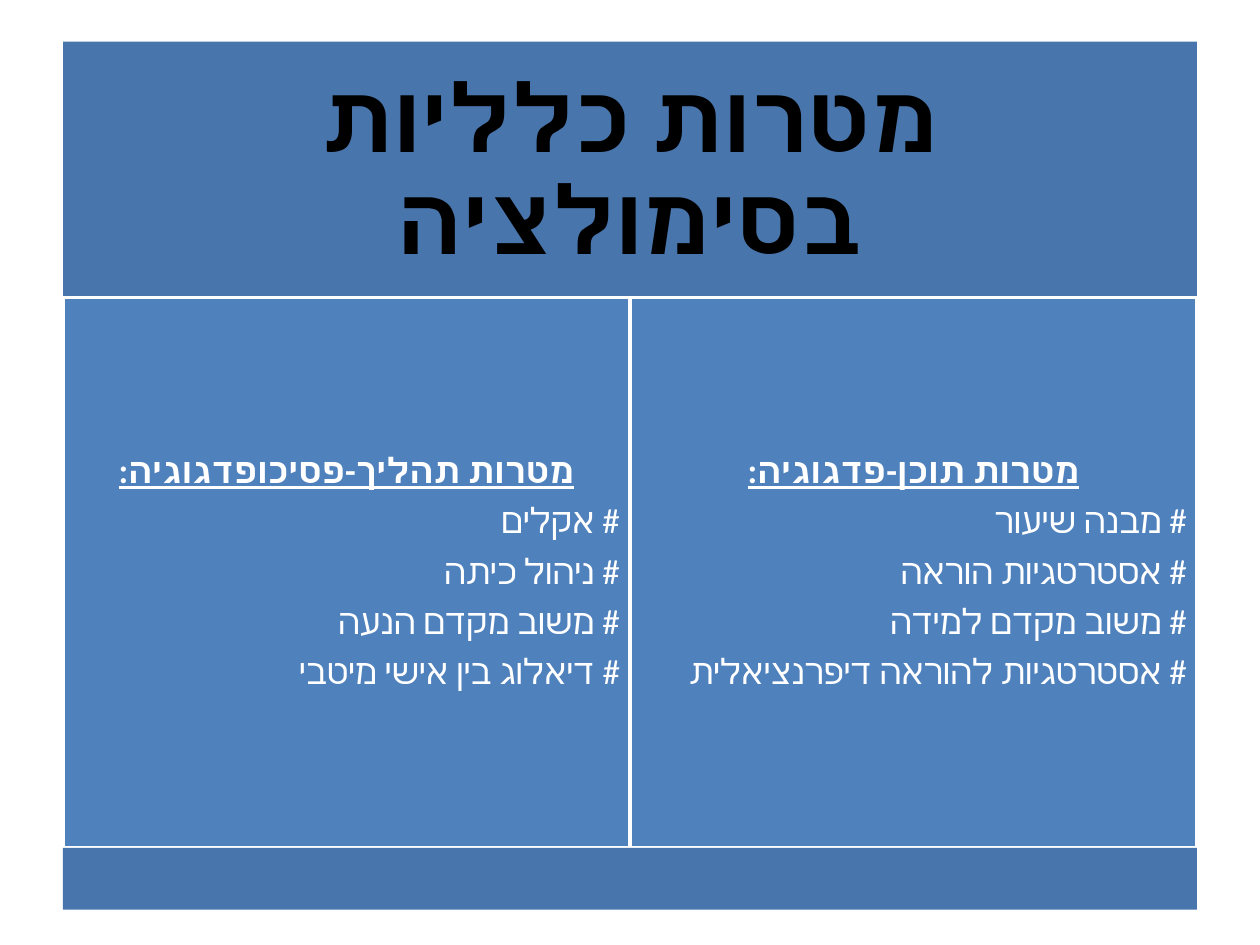
from dataclasses import dataclass

from lxml import etree
from pptx import Presentation
from pptx.dml.color import RGBColor
from pptx.enum.shapes import MSO_SHAPE
from pptx.enum.text import MSO_ANCHOR, MSO_AUTO_SIZE, PP_ALIGN
from pptx.oxml.ns import qn
from pptx.util import Inches, Pt

CENTER, RIGHT = PP_ALIGN.CENTER, PP_ALIGN.RIGHT
MIDDLE = MSO_ANCHOR.MIDDLE
NO_AUTOFIT = MSO_AUTO_SIZE.NONE
RECTANGLE = MSO_SHAPE.RECTANGLE


@dataclass(frozen=True)
class Theme:
    font: str = "Calibri"
    title_size: int = 54
    body_size: int = 20
    band: RGBColor = RGBColor(0x48, 0x75, 0xAC)
    panel: RGBColor = RGBColor(0x4F, 0x81, 0xBD)
    dark: RGBColor = RGBColor(0, 0, 0)
    light: RGBColor = RGBColor(255, 255, 255)


THEME = Theme()
LEFT, WIDTH = 0.5, 9
PANEL_TOP, PANEL_HEIGHT = 2.36, 4.37
PANEL_WIDTH = WIDTH / 2

# Panels from left to right: heading, goals
PANELS = [
    ("מטרות תהליך-פסיכופדגוגיה:",
     ["אקלים", "ניהול כיתה", "משוב מקדם הנעה", "דיאלוג בין אישי מיטבי"]),
    ("מטרות תוכן-פדגוגיה:",
     ["מבנה שיעור", "אסטרטגיות הוראה", "משוב מקדם למידה",
      "אסטרטגיות להוראה דיפרנציאלית"]),
]


def place(shape, left, top, width, height, fill, inset=0.08):
    shape.left, shape.top = Inches(left), Inches(top)
    shape.width, shape.height = Inches(width), Inches(height)
    shape.fill.solid()
    shape.fill.fore_color.rgb = fill
    frame = shape.text_frame
    frame.word_wrap = True
    frame.auto_size = NO_AUTOFIT
    frame.vertical_anchor = MIDDLE
    frame.margin_left = frame.margin_right = Inches(inset)
    frame.margin_top = frame.margin_bottom = Inches(inset)


def write(paragraph, text, size=THEME.body_size, color=THEME.light,
          bold=False, underline=False, align=RIGHT):
    """Fill a right-to-left paragraph that has no bullet."""
    paragraph.alignment = align
    paragraph.line_spacing = 0.9
    paragraph.space_before = Pt(0)
    paragraph.space_after = Pt(0.35 * size)
    properties = paragraph._p.get_or_add_pPr()
    for name, value in (("marL", "0"), ("indent", "0"), ("rtl", "1")):
        properties.set(name, value)
    etree.SubElement(properties, qn("a:buNone"))
    run = paragraph.add_run()
    run.text = text
    font = run.font
    font.name, font.size = THEME.font, Pt(size)
    font.bold, font.underline = bold, underline
    font.color.rgb = color
    # Hebrew takes its typeface from the complex-script font
    etree.SubElement(run._r.get_or_add_rPr(), qn("a:cs"), typeface=THEME.font)


presentation = Presentation()
presentation.slide_width, presentation.slide_height = Inches(10), Inches(7.5)
two_content_layout = presentation.slide_layouts[3]
slide = presentation.slides.add_slide(two_content_layout)

title = slide.shapes.title
place(title, LEFT, 0.33, WIDTH, 2.08, THEME.band, inset=0.23)
write(title.text_frame.paragraphs[0], "מטרות כלליות בסימולציה",
      size=THEME.title_size, color=THEME.dark, bold=True, align=CENTER)

for index, (heading, goals) in enumerate(PANELS):
    panel = slide.placeholders[index + 1]
    place(panel, LEFT + index * PANEL_WIDTH, PANEL_TOP,
          PANEL_WIDTH, PANEL_HEIGHT, THEME.panel)
    panel.line.color.rgb = THEME.light
    panel.line.width = Pt(2)
    frame = panel.text_frame
    write(frame.paragraphs[0], heading, bold=True, underline=True, align=CENTER)
    for goal in goals:
        write(frame.add_paragraph(), f"# {goal}")

footer_band = slide.shapes.add_shape(RECTANGLE, 0, 0, 0, 0)
place(footer_band, LEFT, PANEL_TOP + PANEL_HEIGHT, WIDTH, 0.49, THEME.band)
footer_band.line.fill.background()
footer_band.shadow.inherit = False

presentation.save("out.pptx")
